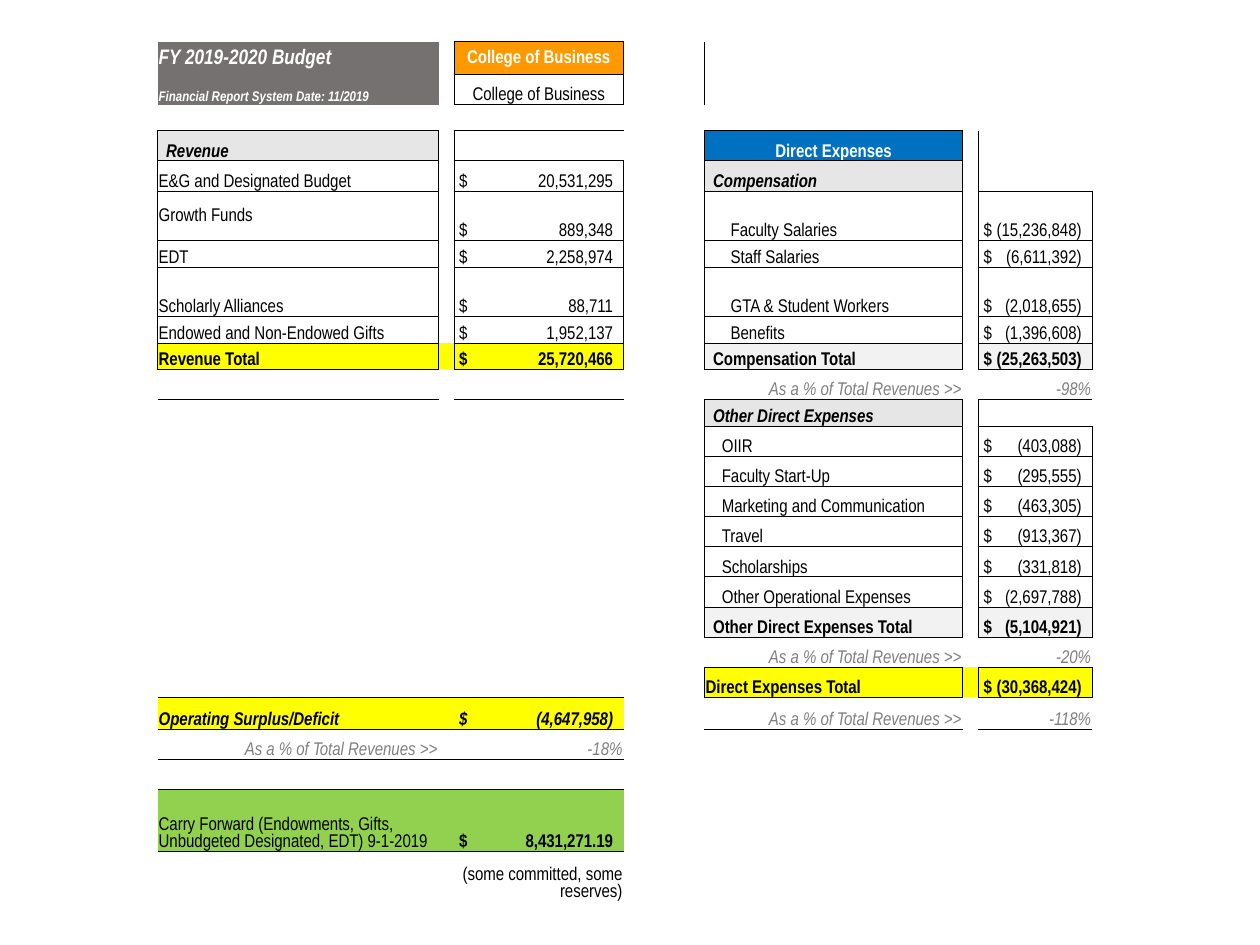
"""Builds the College of Business budget slide as one ruled table."""
from collections import defaultdict
from dataclasses import dataclass, replace

from lxml.etree import SubElement
from pptx import Presentation
from pptx.dml.color import RGBColor
from pptx.enum.text import MSO_ANCHOR as Anchor, PP_ALIGN as Align
from pptx.oxml import parse_xml
from pptx.oxml.ns import nsdecls, qn
from pptx.table import Table
from pptx.util import Pt

FONT = "Arial Narrow"
PLAIN_STYLE = "{2D5ABB26-0587-4C30-8999-92F81FD0307C}"
BLACK, WHITE, GRAY = "000000", "FFFFFF", "808080"
YELLOW, PALE, LIGHT, GREEN = "FFFF00", "F2F2F2", "E7E6E6", "92D050"
COLUMN_WIDTHS = [160.6, 8.8, 97, 46.2, 147.6, 9, 65]
ROW_HEIGHTS = ([18.8, 17.25, 14.85, 17.25, 17.25, 28.4, 15.1, 28.4, 15.1, 15.1, 17.25, 15.1]
               + [17.25] * 9 + [18.2, 17.25, 17.25, 35.4, 28.4])
INCOME, INCOME_GAP, INCOME_AMOUNT, SPACER, EXPENSE, EXPENSE_GAP, EXPENSE_AMOUNT = range(7)
TAB_STOPS = {INCOME_AMOUNT: 88, EXPENSE_AMOUNT: 56}
NEIGHBOURS = {"L": (0, -1, "R"), "R": (0, 1, "L"), "T": (-1, 0, "B"), "B": (1, 0, "T")}
BOX = {"L": 0.5, "R": 0.5, "T": 0.5, "B": 0.5}
BAND = {"T": 0.5, "B": 1}


@dataclass(frozen=True)
class Look:
    fill: str = ""
    color: str = BLACK
    bold: bool = False
    italic: bool = False
    size: float = 10.5
    indent: float = 0.7
    align: Align = Align.LEFT
    anchor: Anchor = Anchor.BOTTOM


@dataclass(frozen=True)
class Entry:
    row: int
    column: int
    text: str
    look: Look
    edges: tuple = tuple(BOX.items())


@dataclass(frozen=True)
class Line:
    label: str
    amount: str
    label_look: Look
    amount_look: Look


ITEM = Look()
AMOUNT = Look(indent=3)
SECTION = Look(fill=LIGHT, bold=True, italic=True, indent=5)
SHARE = Look(color=GRAY, italic=True, align=Align.RIGHT)
SUBTOTAL = Look(fill=PALE, bold=True, indent=5)
SUBTOTAL_AMOUNT = replace(SUBTOTAL, indent=3)
TOTAL = Look(fill=YELLOW, bold=True)
TOTAL_AMOUNT = replace(TOTAL, indent=3)
SALARY = Look(indent=15)
OTHER = Look(indent=10)
BANNER = Look(fill="757171", color=WHITE, bold=True, italic=True)
BAND_EDGES = tuple(BAND.items())
SHARE_LABEL = "As a % of Total Revenues >>"

REVENUE = [
    Line("E&G and Designated Budget", "20,531,295", ITEM, AMOUNT),
    Line("Growth Funds", "889,348", replace(ITEM, anchor=Anchor.MIDDLE), AMOUNT),
    Line("EDT", "2,258,974", ITEM, AMOUNT),
    Line("Scholarly Alliances", "88,711", ITEM, AMOUNT),
    Line("Endowed and Non-Endowed Gifts", "1,952,137", ITEM, AMOUNT),
    Line("Revenue Total", "25,720,466", TOTAL, TOTAL_AMOUNT),
]
COMPENSATION = [
    Line("Faculty Salaries", "(15,236,848)", SALARY, AMOUNT),
    Line("Staff Salaries", "(6,611,392)", SALARY, AMOUNT),
    Line("GTA & Student Workers", "(2,018,655)", SALARY, AMOUNT),
    Line("Benefits", "(1,396,608)", SALARY, AMOUNT),
    Line("Compensation Total", "(25,263,503)", SUBTOTAL, SUBTOTAL_AMOUNT),
]
OTHER_EXPENSES = [
    Line("OIIR", "(403,088)", OTHER, AMOUNT),
    Line("Faculty Start-Up", "(295,555)", OTHER, AMOUNT),
    Line("Marketing and Communication", "(463,305)", OTHER, AMOUNT),
    Line("Travel", "(913,367)", OTHER, AMOUNT),
    Line("Scholarships", "(331,818)", OTHER, AMOUNT),
    Line("Other Operational Expenses", "(2,697,788)", OTHER, AMOUNT),
    Line("Other Direct Expenses Total", "(5,104,921)", SUBTOTAL, SUBTOTAL_AMOUNT),
]
EXPENSE_TOTAL = [Line("Direct Expenses Total", "(30,368,424)", TOTAL, TOTAL_AMOUNT)]
SURPLUS = [Line("Operating Surplus/Deficit", "(4,647,958)", replace(TOTAL, italic=True),
                replace(TOTAL_AMOUNT, italic=True))]
CARRY_FORWARD = [Line("Carry Forward (Endowments, Gifts, Unbudgeted Designated, EDT) 9-1-2019",
                      "8,431,271.19", Look(fill=GREEN), Look(fill=GREEN, bold=True, indent=3))]


def rgb(value: str) -> RGBColor:
    return RGBColor.from_string(value)


def ledger(first_row: int, column: int, lines: list[Line], edges: tuple = tuple(BOX.items())) -> list[Entry]:
    entries = []
    for row, line in enumerate(lines, first_row):
        entries.append(Entry(row, column, line.label, line.label_look, edges))
        entries.append(Entry(row, column + 2, f"$\t{line.amount}", line.amount_look, edges))
    return entries


def share(row: int, column: int, percent: str) -> list[Entry]:
    return [Entry(row, column, SHARE_LABEL, SHARE, ()), Entry(row, column + 2, percent, SHARE, ())]


def gap(row: int, column: int, fill: str, edges: tuple = ()) -> Entry:
    return Entry(row, column, "", Look(fill=fill), edges)


def write_entry(table: Table, entry: Entry) -> None:
    cell, look = table.cell(entry.row, entry.column), entry.look
    cell.margin_left = Pt(look.indent)
    cell.vertical_anchor = look.anchor
    if look.fill:
        cell.fill.solid()
        cell.fill.fore_color.rgb = rgb(look.fill)
    if not entry.text:
        return
    paragraph = cell.text_frame.paragraphs[0]
    paragraph.alignment = look.align
    if "\t" in entry.text:
        stops = SubElement(paragraph._p.get_or_add_pPr(), qn("a:tabLst"))
        SubElement(stops, qn("a:tab"), pos=str(Pt(TAB_STOPS[entry.column])), algn="r")
    run = paragraph.add_run()
    run.text = entry.text
    run.font.name, run.font.size = FONT, Pt(look.size)
    run.font.bold, run.font.italic = look.bold, look.italic
    run.font.color.rgb = rgb(look.color)


def draw_edges(table: Table, entries: list[Entry]) -> None:
    rules = defaultdict(dict)
    for entry in entries:
        for side, width in entry.edges:
            down, across, facing = NEIGHBOURS[side]
            rules[entry.row, entry.column][side] = width
            rules[entry.row + down, entry.column + across][facing] = width
    for (row, column), sides in rules.items():
        if not (0 <= row < len(ROW_HEIGHTS) and 0 <= column < len(COLUMN_WIDTHS)):
            continue
        properties = table.cell(row, column)._tc.get_or_add_tcPr()
        for place, side in enumerate(sorted(sides, key="LRTB".index)):
            properties.insert(place, parse_xml(
                f'<a:ln{side} {nsdecls("a")} w="{Pt(sides[side])}"><a:solidFill>'
                f'<a:srgbClr val="{BLACK}"/></a:solidFill></a:ln{side}>'))


def add_budget_table(slide) -> Table:
    frame = slide.shapes.add_table(len(ROW_HEIGHTS), len(COLUMN_WIDTHS), Pt(90), Pt(23.8),
                                   Pt(sum(COLUMN_WIDTHS)), Pt(sum(ROW_HEIGHTS)))
    table = frame.table
    table.first_row = table.horz_banding = False
    table._tbl.tblPr.find(qn("a:tableStyleId")).text = PLAIN_STYLE
    for column, width in zip(table.columns, COLUMN_WIDTHS):
        column.width = Pt(width)
    for row, height in zip(table.rows, ROW_HEIGHTS):
        row.height = Pt(height)
    for cell in table.iter_cells():
        cell.margin_left = cell.margin_right = cell.margin_top = Pt(0.7)
        cell.margin_bottom = 0
        SubElement(cell.text_frame.paragraphs[0]._p, qn("a:endParaRPr"), sz="800")
    return table


def main() -> None:
    deck = Presentation()
    deck.slide_width, deck.slide_height = Pt(720), Pt(540)
    table = add_budget_table(deck.slides.add_slide(deck.slide_layouts[6]))
    centered = Look(align=Align.CENTER)
    college = replace(centered, fill="FF9900", color=WHITE, bold=True, anchor=Anchor.MIDDLE)
    entries = [
        Entry(0, INCOME, "FY 2019-2020 Budget", replace(BANNER, size=12, anchor=Anchor.MIDDLE), ()),
        Entry(1, INCOME, "Financial Report System Date: 11/2019", replace(BANNER, size=8), ()),
        Entry(0, INCOME_AMOUNT, "College of Business", college),
        Entry(1, INCOME_AMOUNT, "College of Business", centered),
        Entry(3, INCOME, "Revenue", SECTION),
        *ledger(4, INCOME, REVENUE),
        gap(9, INCOME_GAP, YELLOW),
        Entry(3, EXPENSE, "Direct Expenses", replace(centered, fill="0070C0", color=WHITE, bold=True)),
        Entry(4, EXPENSE, "Compensation", SECTION),
        *ledger(5, EXPENSE, COMPENSATION),
        *share(10, EXPENSE, "-98%"),
        Entry(11, EXPENSE, "Other Direct Expenses", SECTION),
        *ledger(12, EXPENSE, OTHER_EXPENSES),
        *share(19, EXPENSE, "-20%"),
        *ledger(20, EXPENSE, EXPENSE_TOTAL),
        gap(20, EXPENSE_GAP, YELLOW),
        *share(21, EXPENSE, "-118%"),
        *ledger(21, INCOME, SURPLUS, BAND_EDGES),
        gap(21, INCOME_GAP, YELLOW, BAND_EDGES),
        *share(22, INCOME, "-18%"),
        *ledger(24, INCOME, CARRY_FORWARD, BAND_EDGES),
        gap(24, INCOME_GAP, GREEN, BAND_EDGES),
        Entry(25, INCOME_AMOUNT, "(some committed, some reserves)", Look(align=Align.RIGHT), ()),
    ]
    for entry in entries:
        write_entry(table, entry)
    draw_edges(table, entries)
    deck.save("out.pptx")


if __name__ == "__main__":
    main()
